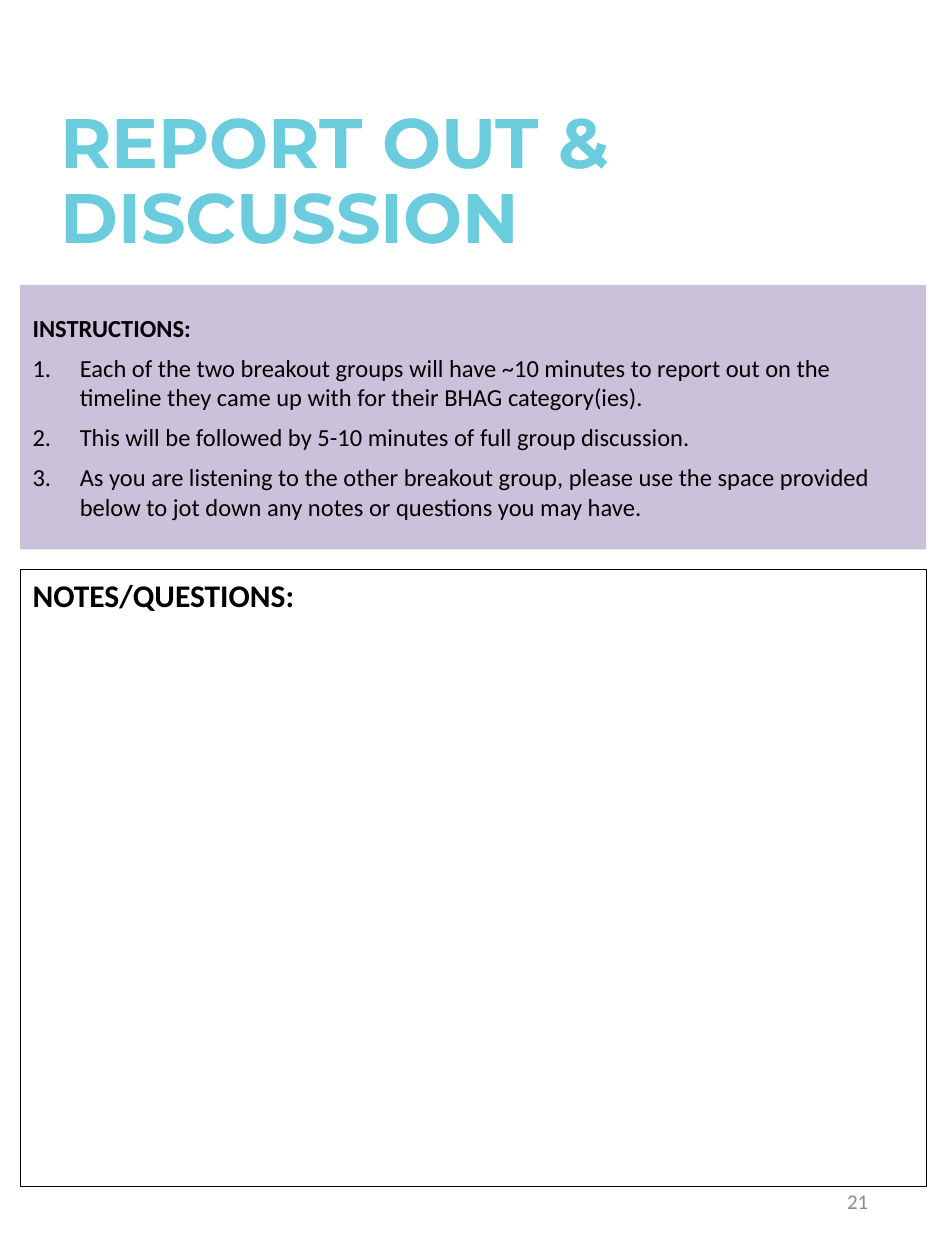
from lxml import etree
from pptx import Presentation, util as u
from pptx.dml.color import RGBColor
from pptx.enum import shapes, text
from pptx.oxml.ns import qn

# Content
TITLE = "REPORT OUT & DISCUSSION"
HEADING = "INSTRUCTIONS:"
STEPS = [
    "Each of the two breakout groups will have ~10 minutes to report out on the "
    "timeline they came up with for their BHAG category(ies).",
    "This will be followed by 5-10 minutes of full group discussion.",
    "As you are listening to the other breakout group, please use the space provided "
    "below to jot down any notes or questions you may have.",
]
NOTES = "NOTES/QUESTIONS:"
PAGE_NUMBER = "21"

# Colours and type sizes
THEME = {
    "panel": RGBColor.from_string("CCC1DA"),
    "outline": RGBColor.from_string("000000"),
    "title": {"name": "Montserrat", "size": u.Pt(40), "bold": True, "color": "6ACCDD"},
    "heading": {"name": "Calibri", "size": u.Pt(14), "bold": True, "color": "000000"},
    "step": {"name": "Calibri", "size": u.Pt(14), "bold": False, "color": "000000"},
    "notes": {"name": "Calibri", "size": u.Pt(18), "bold": True, "color": "000000"},
    "number": {"name": "Calibri", "size": u.Pt(12), "bold": False, "color": "8C8C8C"},
}

# Layout in points
PAGE_WIDTH, PAGE_HEIGHT = 540, 720
PANEL_LEFT, PANEL_WIDTH = 11.5, 517.7
STEP_INDENT = 27
MIDDLE, TOP = text.MSO_ANCHOR.MIDDLE, text.MSO_ANCHOR.TOP
LEFT, RIGHT = text.PP_ALIGN.LEFT, text.PP_ALIGN.RIGHT


def write(box, lines, anchor, **layout):
    """Fill a box with (words, style) lines sharing one paragraph layout."""
    frame = box.text_frame
    frame.word_wrap = True
    frame.vertical_anchor = anchor
    for index, (words, style) in enumerate(lines):
        para = frame.paragraphs[0] if index == 0 else frame.add_paragraph()
        for key, value in {"alignment": LEFT, **layout}.items():
            setattr(para, key, value)
        span = para.add_run()
        span.text = words
        for key, value in THEME[style].items():
            if key == "color":
                span.font.color.rgb = RGBColor.from_string(value)
            else:
                setattr(span.font, key, value)
    return frame


def number(para):
    """Give a paragraph a hanging automatic number."""
    props = para._p.get_or_add_pPr()
    props.set("marL", str(u.Pt(STEP_INDENT)))
    props.set("indent", str(-u.Pt(STEP_INDENT)))
    etree.SubElement(props, qn("a:buFont"), typeface="+mj-lt")
    etree.SubElement(props, qn("a:buAutoNum"), type="arabicPeriod")


def add_box(page, *place):
    return page.shapes.add_textbox(*map(u.Pt, place))


def add_panel(page, top, height):
    panel = page.shapes.add_shape(
        shapes.MSO_SHAPE.RECTANGLE, *map(u.Pt, (PANEL_LEFT, top, PANEL_WIDTH, height)))
    panel.shadow.inherit = False
    return panel


def main():
    deck = Presentation()
    deck.slide_width, deck.slide_height = u.Pt(PAGE_WIDTH), u.Pt(PAGE_HEIGHT)
    page = deck.slides.add_slide(deck.slide_layouts[6])

    # Title and page number
    write(add_box(page, 27.4, 44.6, 486, 120.2), [(TITLE, "title")], MIDDLE,
          line_spacing=0.9)
    write(add_box(page, 381.6, 667.4, 121.7, 38.2), [(PAGE_NUMBER, "number")], MIDDLE,
          alignment=RIGHT)

    # Instructions
    panel = add_panel(page, 162.8, 151.2)
    panel.fill.solid()
    panel.fill.fore_color.rgb = THEME["panel"]
    panel.line.fill.background()
    lines = [(HEADING, "heading")] + [(step, "step") for step in STEPS]
    frame = write(panel, lines, MIDDLE, space_after=u.Pt(6))
    for para in frame.paragraphs[1:]:
        number(para)

    # Space for notes
    panel = add_panel(page, 325.4, 352.8)
    panel.fill.background()
    panel.line.color.rgb = THEME["outline"]
    panel.line.width = u.Pt(0.5)
    write(panel, [(NOTES, "notes")], TOP)

    deck.save("out.pptx")


if __name__ == "__main__":
    main()
